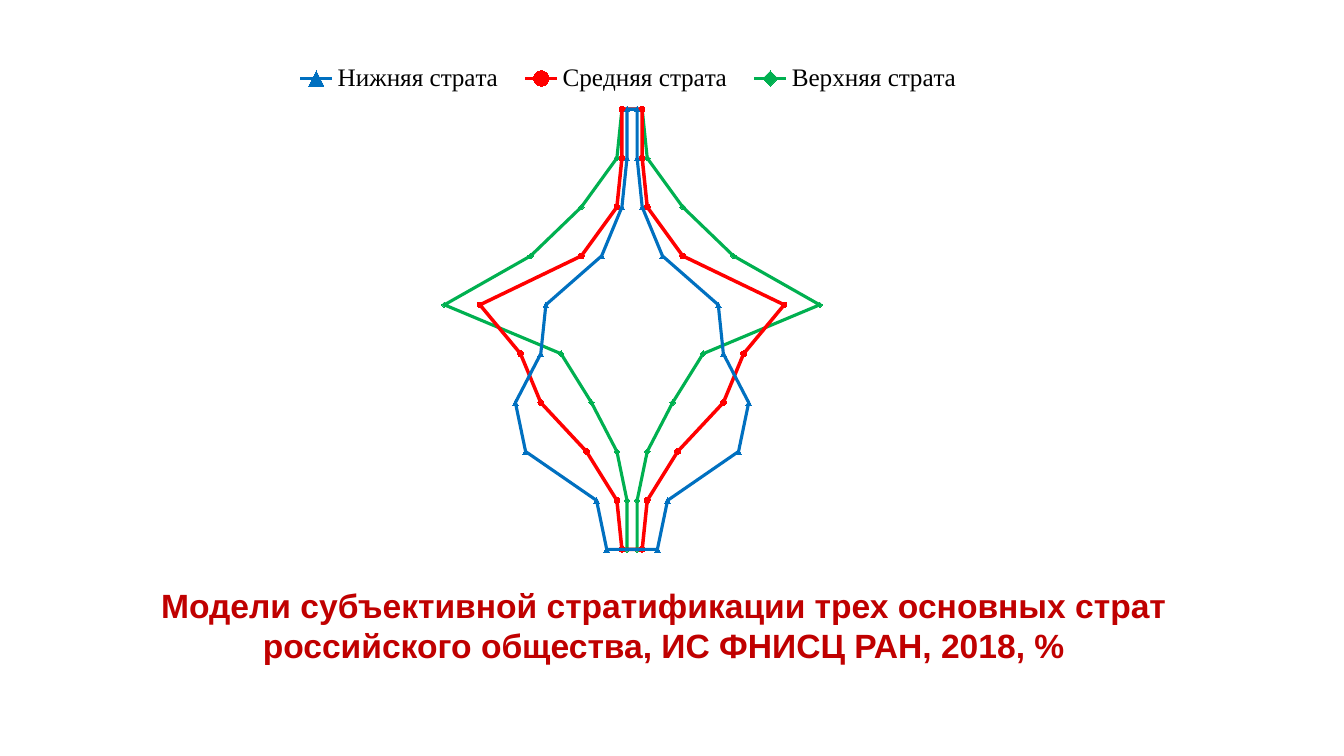
from pptx import Presentation
from pptx.chart.data import XyChartData
from pptx.dml.color import RGBColor
from pptx.enum.chart import XL_CHART_TYPE as ChartType, XL_LEGEND_POSITION as LegendPosition
from pptx.enum.chart import XL_MARKER_STYLE as Marker
from pptx.enum.text import MSO_ANCHOR as Anchor, MSO_AUTO_SIZE as AutoSize, PP_ALIGN as Align
from pptx.oxml import parse_xml
from pptx.oxml.ns import nsdecls, qn
from pptx.util import Cm, Pt

TITLE = ("Модели субъективной стратификации трех основных страт "
         "российского общества, ИС ФНИСЦ РАН, 2018, %")
LEVELS = list(range(100, 0, -10))
STRATA = [
    ("Нижняя страта", [1, 1, 2, 6, 17, 18, 23, 21, 7, 5], "0070C0", 2.25, Marker.TRIANGLE, "0070C0"),
    ("Средняя страта", [2, 2, 3, 10, 30, 22, 18, 9, 3, 2], "FF0000", 2.5, Marker.CIRCLE, "C00000"),
    ("Верхняя страта", [2, 3, 10, 20, 37, 14, 8, 3, 1, 1], "00B050", 2.25, Marker.DIAMOND, "00B050"),
]


def color(value):
    return RGBColor.from_string(value)


def set_font(font, name, size, value):
    font.name = name
    font.size = Pt(size)
    font.color.rgb = color(value)


def manual_layout(x, y, width, height, inner=False):
    target = '<c:layoutTarget val="inner"/>' if inner else ""
    return parse_xml(
        f'<c:layout {nsdecls("c")}><c:manualLayout>{target}'
        '<c:xMode val="edge"/><c:yMode val="edge"/>'
        f'<c:x val="{x}"/><c:y val="{y}"/><c:w val="{width}"/><c:h val="{height}"/>'
        '</c:manualLayout></c:layout>')


def closed_outline(half_widths):
    right = list(zip(half_widths, LEVELS))
    left = [(-width, level) for width, level in reversed(right)]
    return right + left + right[:1]


def strata_data():
    data = XyChartData()
    for name, half_widths, *_ in STRATA:
        series = data.add_series(name)
        for width, level in closed_outline(half_widths):
            series.add_data_point(width, level)
    return data


def hide_axis(axis, minimum, maximum):
    axis.minimum_scale = minimum
    axis.maximum_scale = maximum
    axis.has_major_gridlines = False
    axis.visible = False


def format_series(series, line_color, line_width, marker, marker_color):
    series.smooth = False
    series.format.line.color.rgb = color(line_color)
    series.format.line.width = Pt(line_width)
    series.marker.style = marker
    series.marker.size = 4
    series.marker.format.fill.solid()
    series.marker.format.fill.fore_color.rgb = color(marker_color)
    series.marker.format.line.color.rgb = color(marker_color)


def place_legend(chart):
    chart.has_legend = True
    legend = chart.legend
    legend.position = LegendPosition.BOTTOM
    legend.include_in_layout = False
    set_font(legend.font, "Times New Roman", 18, "000000")
    element = legend._element
    for layout in element.findall(qn("c:layout")):
        element.remove(layout)
    element.find(qn("c:legendPos")).addnext(manual_layout(0.03, 0.03, 0.93, 0.07))


def place_plot(chart):
    plot_area = chart._chartSpace.chart.plotArea
    for layout in plot_area.findall(qn("c:layout")):
        plot_area.remove(layout)
    plot_area.insert(0, manual_layout(0.16, 0.105, 0.68, 0.877, inner=True))


def add_strata_chart(slide, left, top, width, height):
    frame = slide.shapes.add_chart(ChartType.XY_SCATTER_LINES, left, top, width, height, strata_data())
    chart = frame.chart
    chart.has_title = False
    set_font(chart.font, "DejaVu Sans", 10, "000000")
    chart.plots[0].vary_by_categories = False
    hide_axis(chart.category_axis, -50, 50)
    hide_axis(chart.value_axis, 8, 102)
    for series, (_, _, *style) in zip(chart.plots[0].series, STRATA):
        format_series(series, *style)
    place_legend(chart)
    place_plot(chart)


def place_title(slide, left, top, width, height):
    title = slide.shapes.title
    title.left, title.top, title.width, title.height = left, top, width, height
    text_frame = title.text_frame
    text_frame.text = TITLE
    text_frame.word_wrap = True
    text_frame.auto_size = AutoSize.NONE
    text_frame.vertical_anchor = Anchor.BOTTOM
    paragraph = text_frame.paragraphs[0]
    paragraph.alignment = Align.CENTER
    font = paragraph.runs[0].font
    set_font(font, "Arial", 24, "C00000")
    font.bold = True


def main():
    presentation = Presentation()
    presentation.slide_width = Cm(33.87)
    presentation.slide_height = Cm(19.05)
    slide = presentation.slides.add_slide(presentation.slide_layouts[5])
    place_title(slide, Cm(2.92), Cm(15.32), Cm(27.61), Cm(1.57))
    add_strata_chart(slide, Cm(6.53), Cm(1.12), Cm(18.8), Cm(13.21))
    presentation.save("out.pptx")


if __name__ == "__main__":
    main()
